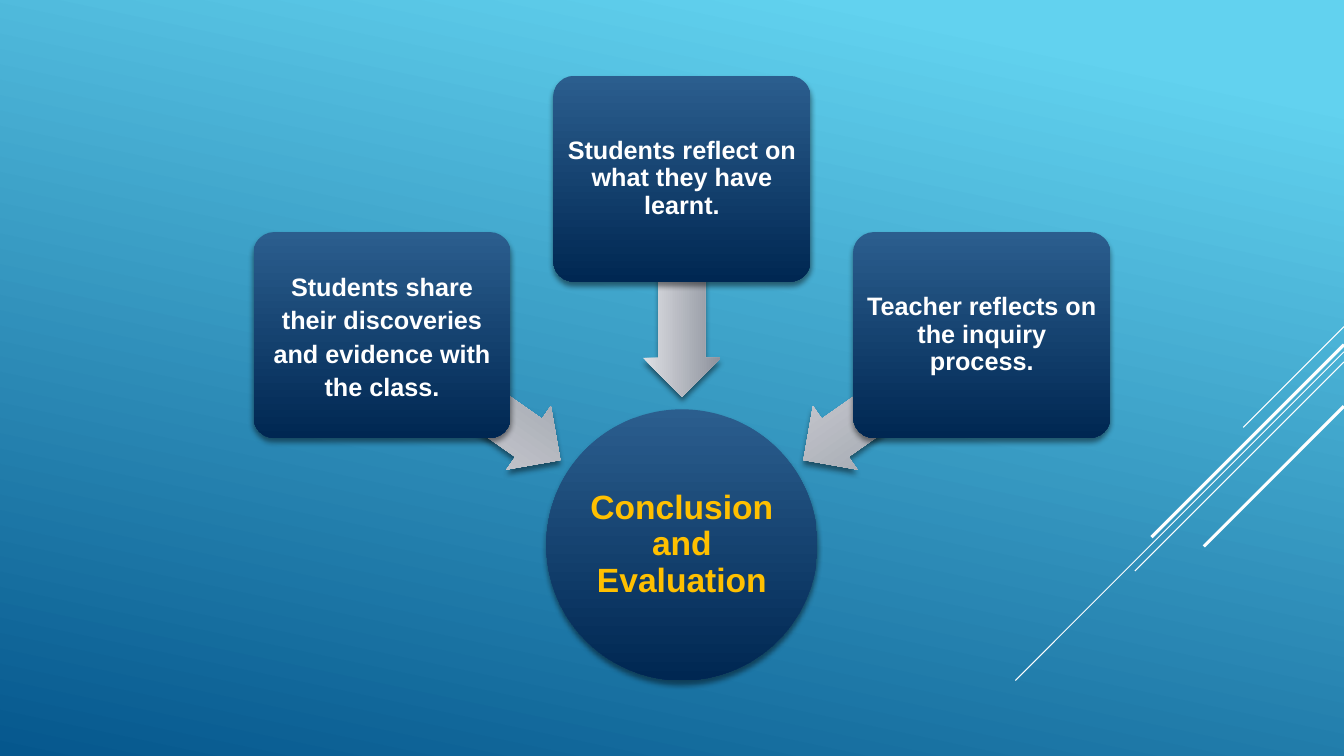
from dataclasses import dataclass

from lxml.etree import SubElement
from pptx import Presentation
from pptx.dml.color import RGBColor
from pptx.dml.fill import FillFormat
from pptx.enum.shapes import MSO_CONNECTOR, MSO_SHAPE
from pptx.enum.text import MSO_ANCHOR, PP_ALIGN
from pptx.oxml.ns import qn
from pptx.shapes.autoshape import Shape
from pptx.slide import Slide
from pptx.util import Pt


@dataclass(frozen=True)
class Gradient:
    start: str
    end: str
    clockwise_angle: float = 90
    start_position: float = 0


@dataclass(frozen=True)
class Theme:
    background: Gradient = Gradient("62D2EF", "05578D", 102, 0.1)
    panel: Gradient = Gradient("2B5E8E", "002752")
    arrow: Gradient = Gradient("DEE0E4", "8D919C")
    light: str = "FFFFFF"
    accent: str = "FFC000"
    shadow: str = "000000"
    font: str = "Arial"
    hub_size: float = 24
    card_size: float = 18


@dataclass(frozen=True)
class Ray:
    """A 45 degree line running down and left from the right edge."""
    top: float
    run: float
    weight: float


@dataclass(frozen=True)
class Step:
    """A card and its arrow; column counts from the hub's centre line."""
    text: str
    column: int
    card_top: float
    arrow_middle: float
    arrow_rotation: float
    line_spacing: float = 0.9


THEME = Theme()
SLIDE_WIDTH, SLIDE_HEIGHT = 960, 540
HUB_CENTER, HUB_TOP, HUB_SIZE = 487.1, 292.4, 193.6
CARD_WIDTH, CARD_HEIGHT, CARD_PITCH = 183.6, 147, 214.2
ARROW_WIDTH, ARROW_HEIGHT, ARROW_PITCH = 155.5, 55.4, 150.5

RAYS = [
    Ray(233.3, 72, 0.75),
    Ray(251.3, 234.7, 0.75),
    Ray(258.5, 149.4, 0.75),
    Ray(246.2, 137.5, 2.25),
    Ray(290.2, 100.1, 2.25),
]
STEPS = [
    Step("Students share their discoveries and evidence with the class.",
         -1, 165.8, 284, 215, 1.1),
    Step("Students reflect on what they have learnt.", 0, 54.2, 205.6, 270),
    Step("Teacher reflects on the inquiry process.", 1, 165.8, 284, 325),
]


def apply_gradient(fill: FillFormat, gradient: Gradient) -> None:
    fill.gradient()
    fill.gradient_angle = 360 - gradient.clockwise_angle
    first, last = fill.gradient_stops
    first.color.rgb = RGBColor.from_string(gradient.start)
    first.position = gradient.start_position
    last.color.rgb = RGBColor.from_string(gradient.end)
    last.position = 1


def add_shadow(shape: Shape) -> None:
    shape.shadow.inherit = False
    effects = shape.element.spPr.find(qn("a:effectLst"))
    shadow = SubElement(effects, qn("a:outerShdw"), {
        "blurRad": str(Pt(4)), "dist": str(Pt(3)), "dir": "5400000",
        "algn": "ctr", "rotWithShape": "0"})
    color = SubElement(shadow, qn("a:srgbClr"), val=THEME.shadow)
    SubElement(color, qn("a:alpha"), val="46000")


def add_block(page: Slide, kind: MSO_SHAPE, center: float, top: float,
              width: float, height: float, gradient: Gradient) -> Shape:
    block = page.shapes.add_shape(
        kind, Pt(center - width / 2), Pt(top), Pt(width), Pt(height))
    apply_gradient(block.fill, gradient)
    block.line.fill.background()
    add_shadow(block)
    return block


def write_text(shape: Shape, text: str, size: float, color: str,
               inset: float, line_spacing: float) -> None:
    frame = shape.text_frame
    frame.word_wrap = True
    frame.vertical_anchor = MSO_ANCHOR.MIDDLE
    frame.margin_left = frame.margin_right = Pt(inset)
    frame.margin_top = frame.margin_bottom = Pt(inset)
    para = frame.paragraphs[0]
    para.alignment = PP_ALIGN.CENTER
    para.line_spacing = line_spacing
    span = para.add_run()
    span.text = text
    span.font.name = THEME.font
    span.font.size = Pt(size)
    span.font.bold = True
    span.font.color.rgb = RGBColor.from_string(color)


def add_ray(page: Slide, ray: Ray) -> None:
    line = page.shapes.add_connector(
        MSO_CONNECTOR.STRAIGHT, Pt(SLIDE_WIDTH), Pt(ray.top),
        Pt(SLIDE_WIDTH - ray.run), Pt(ray.top + ray.run))
    line.line.color.rgb = RGBColor.from_string(THEME.light)
    line.line.width = Pt(ray.weight)
    SubElement(line.element.spPr, qn("a:effectLst"))


def add_hub(page: Slide) -> None:
    hub = add_block(page, MSO_SHAPE.OVAL, HUB_CENTER, HUB_TOP,
                    HUB_SIZE, HUB_SIZE, THEME.panel)
    write_text(hub, "Conclusion and Evaluation", THEME.hub_size,
               THEME.accent, 1.2, 0.9)


def add_step(page: Slide, step: Step) -> None:
    # The arrow lies beneath its card
    arrow = add_block(page, MSO_SHAPE.LEFT_ARROW,
                      HUB_CENTER + step.column * ARROW_PITCH,
                      step.arrow_middle - ARROW_HEIGHT / 2,
                      ARROW_WIDTH, ARROW_HEIGHT, THEME.arrow)
    arrow.adjustments[0] = 0.6
    arrow.adjustments[1] = 0.5
    arrow.rotation = step.arrow_rotation

    card = add_block(page, MSO_SHAPE.ROUNDED_RECTANGLE,
                     HUB_CENTER + step.column * CARD_PITCH, step.card_top,
                     CARD_WIDTH, CARD_HEIGHT, THEME.panel)
    card.adjustments[0] = 0.1
    write_text(card, step.text, THEME.card_size, THEME.light, 2.7,
               step.line_spacing)


def main() -> None:
    deck = Presentation()
    deck.slide_width, deck.slide_height = Pt(SLIDE_WIDTH), Pt(SLIDE_HEIGHT)
    page = deck.slides.add_slide(deck.slide_layouts[6])
    apply_gradient(page.background.fill, THEME.background)

    # Decorative rays at the right edge
    for ray in RAYS:
        add_ray(page, ray)

    # Converging diagram
    add_hub(page)
    for step in STEPS:
        add_step(page, step)

    deck.save("out.pptx")


if __name__ == "__main__":
    main()
